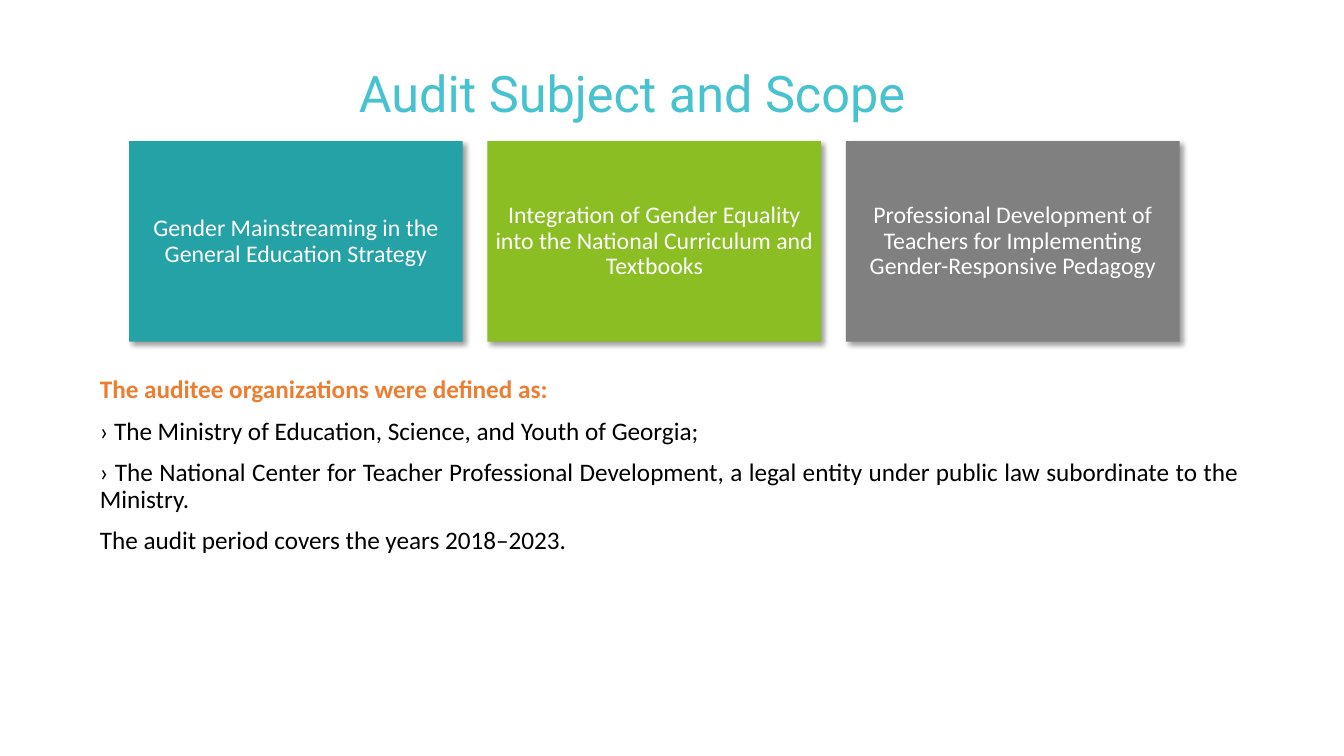
from lxml import etree
from pptx import Presentation
from pptx.dml.color import RGBColor
from pptx.enum.shapes import MSO_SHAPE
from pptx.enum.text import MSO_ANCHOR, MSO_AUTO_SIZE, PP_ALIGN
from pptx.oxml import parse_xml
from pptx.oxml.ns import nsdecls, qn
from pptx.util import Inches, Pt

COLORS = {
    "title": "47C3D0",
    "heading": "ED7D31",
    "text": "000000",
    "white": "FFFFFF",
    "teal": "25A2A6",
    "green": "8ABE23",
    "gray": "808080",
}

SHADOW = f"""<a:effectLst {nsdecls("a")}>
  <a:outerShdw blurRad="50800" dist="38100" dir="2700000" algn="tl" rotWithShape="0">
    <a:srgbClr val="000000"><a:alpha val="40000"/></a:srgbClr>
  </a:outerShdw>
</a:effectLst>"""


def write(para, text, size=18, color="text", font="Calibri", bold=False,
          align=PP_ALIGN.CENTER, before=0):
    """Fill a paragraph with one formatted, unbulleted run."""
    properties = para._p.get_or_add_pPr()
    properties.set("marL", "0")
    properties.set("indent", "0")
    etree.SubElement(properties, qn("a:buNone"))
    para.alignment = align
    para.line_spacing = 0.9
    para.space_before = Pt(before)
    span = para.add_run()
    span.text = text
    span.font.name = font
    span.font.size = Pt(size)
    span.font.bold = bold
    span.font.color.rgb = RGBColor.from_string(COLORS[color])


def place(shape, left, top, width, height):
    shape.left, shape.top = Inches(left), Inches(top)
    shape.width, shape.height = Inches(width), Inches(height)


deck = Presentation()
deck.slide_width, deck.slide_height = Inches(13.33), Inches(7.5)
page = deck.slides.add_slide(deck.slide_layouts[1])

# Title
title = page.shapes.title
place(title, 0.52, 0.3, 11.5, 1.3)
title.text_frame.auto_size = MSO_AUTO_SIZE.NONE
title.text_frame.vertical_anchor = MSO_ANCHOR.MIDDLE
write(title.text_frame.paragraphs[0], "Audit Subject and Scope",
      size=36, color="title", font="Roboto")

# Auditees and period
body = page.placeholders[1]
place(body, 0.89, 3.69, 11.5, 1.98)
body.text_frame.auto_size = MSO_AUTO_SIZE.NONE
heading = body.text_frame.paragraphs[0]
write(heading, "The auditee organizations were defined as:",
      color="heading", bold=True, align=PP_ALIGN.JUSTIFY)
for line in (
    "› The Ministry of Education, Science, and Youth of Georgia;",
    "› The National Center for Teacher Professional Development, a legal entity "
    "under public law subordinate to the Ministry.",
    "The audit period covers the years 2018–2023.",
):
    write(body.text_frame.add_paragraph(), line, align=PP_ALIGN.JUSTIFY, before=10)

# Audit topics
topics = [
    ("teal", "Gender Mainstreaming in the General Education Strategy"),
    ("green", "Integration of Gender Equality into the National Curriculum and Textbooks"),
    ("gray", "Professional Development of Teachers for Implementing "
             "Gender-Responsive Pedagogy"),
]
CARD_LEFT, CARD_STEP = 1.28, 3.555
for index, (fill, topic) in enumerate(topics):
    card = page.shapes.add_shape(
        MSO_SHAPE.RECTANGLE, Inches(CARD_LEFT + index * CARD_STEP), Inches(1.4),
        Inches(3.31), Inches(1.99))
    card.fill.solid()
    card.fill.fore_color.rgb = RGBColor.from_string(COLORS[fill])
    card.line.fill.background()
    card._element.spPr.append(parse_xml(SHADOW))
    frame = card.text_frame
    frame.word_wrap = True
    frame.vertical_anchor = MSO_ANCHOR.MIDDLE
    frame.margin_left = frame.margin_right = Inches(0.07)
    frame.margin_top = frame.margin_bottom = Inches(0.07)
    write(frame.paragraphs[0], topic, size=17, color="white")

deck.save("out.pptx")
